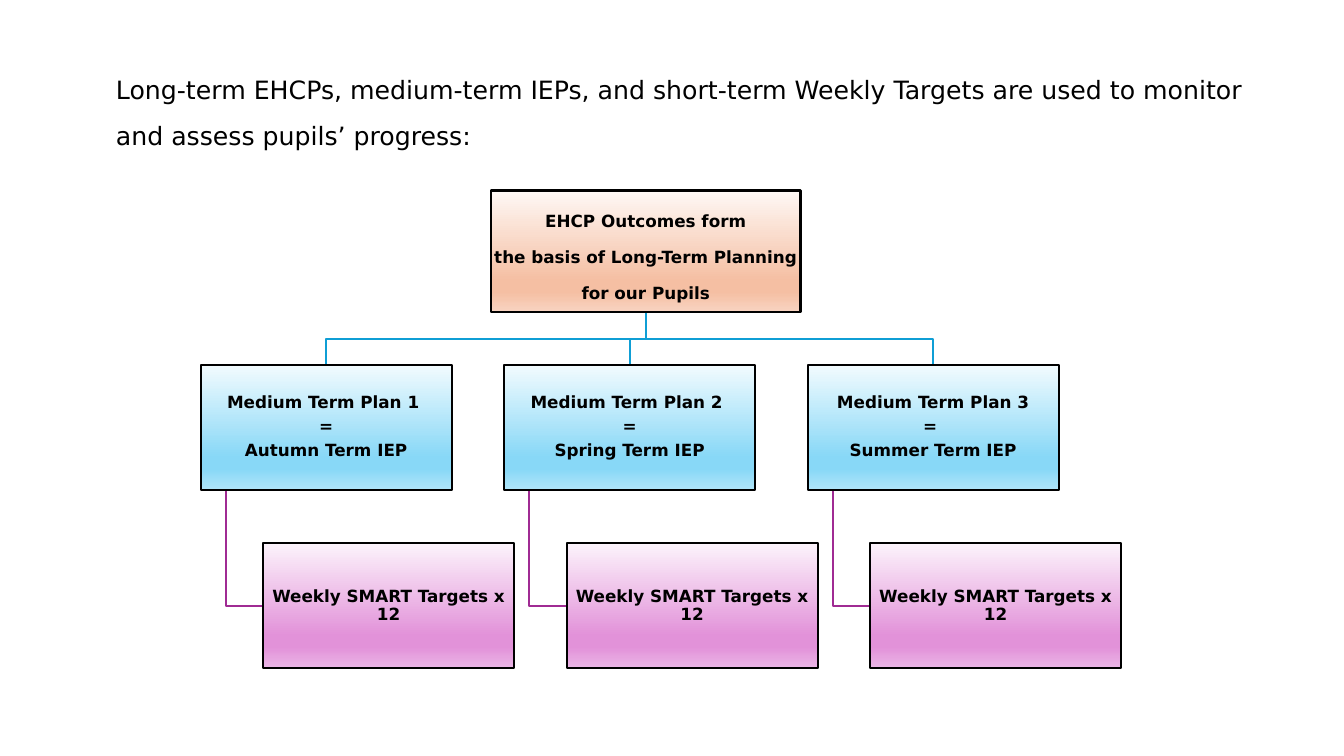
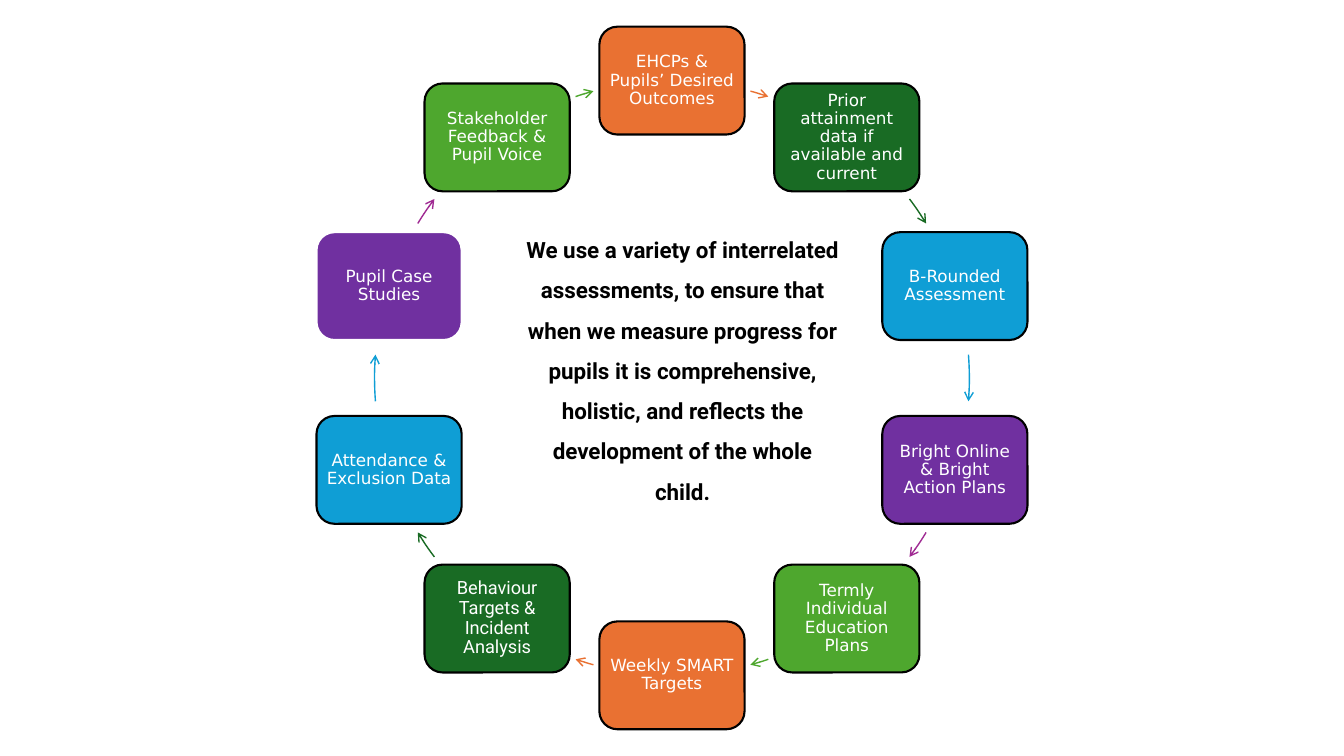
"""Build two slides on how pupils' progress is planned and assessed."""
import math

from lxml import etree
from pptx import Presentation
from pptx import util as u
from pptx.dml.color import RGBColor
from pptx.enum import shapes, text
from pptx.oxml.ns import qn

PAGE_WIDTH, PAGE_HEIGHT = 13.33, 7.5
COLORS = {
    "black": "000000", "white": "FFFFFF", "orange": "E97132",
    "forest": "196B24", "blue": "0F9ED5", "purple": "7030A0",
    "plum": "A02B93", "green": "4EA72E",
}
GRADIENTS = {
    "peach": ("FEF8F5", "F5BFA3", "F5BFA3", "F8D4C2"),
    "sky": ("F2FBFE", "88D8F7", "88D8F7", "B0E5F9"),
    "pink": ("FCF3FB", "E292D9", "E292D9", "EBB6E6"),
}
GRADIENT_STOPS = (0, 74, 83, 100)
MAIN_FONT, ACCENT_FONT = "DejaVu Sans", "Roboto"

COLUMN_LEFT, COLUMN_PITCH = 1.99, 3.01
PLAN_TOP, TARGET_TOP = 3.62, 5.39
BOX_WIDTH, BOX_HEIGHT = 2.49, 1.24
TARGET_INDENT, STEM_INDENT = 0.62, 0.25
OUTCOME_BOX = (4.87, 1.89, 3.07, 1.21)
PLANS = (
    ("Medium Term Plan 1 ", "=", "Autumn Term IEP"),
    ("Medium Term Plan 2 ", "=", "Spring Term IEP"),
    ("Medium Term Plan 3", "= ", "Summer Term IEP"),
)

RING_X, RING_Y, RING_RADIUS = PAGE_WIDTH / 2, PAGE_HEIGHT / 2, 2.95
NODE_WIDTH, NODE_HEIGHT = 1.44, 1.07
NODES = (
    ("EHCPs & Pupils’ Desired Outcomes", "orange"),
    ("Prior attainment data if available and current", "forest"),
    ("B-Rounded Assessment", "blue"),
    ("Bright Online & Bright Action Plans", "purple"),
    ("Termly Individual Education Plans", "green"),
    ("Weekly SMART Targets", "orange"),
    ("Behaviour Targets & Incident Analysis", "forest"),
    ("Attendance & Exclusion Data", "blue"),
    ("Pupil Case Studies", "purple"),
    ("Stakeholder Feedback & Pupil Voice", "green"),
)
NODE_FORMATS = {
    "Behaviour Targets & Incident Analysis": {"size": 13, "font": ACCENT_FONT},
}
NODE_LINES = {"Pupil Case Studies": "white"}
ARROW_COLORS = ("orange", "forest", "blue", "plum", "green")
ARROW_ANGLES = ((15.3, 18.9), (53, 58.7), (85.5, 94.5), (121.3, 127), (161.1, 164.7))


def rgb(name):
    """Return the named colour."""
    return RGBColor.from_string(COLORS[name])


def write_text(frame, *lines, size=12, font=MAIN_FONT, color="black", bold=False,
               align=text.PP_ALIGN.CENTER, spacing=0.9, after=4.2):
    """Fill a text frame with one formatted paragraph per line."""
    frame.word_wrap = True
    for index, line in enumerate(lines):
        para = frame.add_paragraph() if index else frame.paragraphs[0]
        para.alignment = align
        para.line_spacing = spacing
        para.space_before = u.Pt(0)
        para.space_after = u.Pt(after)
        span = para.add_run()
        span.text = line
        span.font.size = u.Pt(size)
        span.font.name = font
        span.font.bold = bold
        span.font.color.rgb = rgb(color)


def add_page(deck, title, left, top, width, height, **formats):
    """Add a title-only slide with its title moved and formatted."""
    page = deck.slides.add_slide(deck.slide_layouts[5])
    box = page.shapes.title
    box.left, box.top, box.width, box.height = map(u.Inches, (left, top, width, height))
    frame = box.text_frame
    frame.auto_size = text.MSO_AUTO_SIZE.NONE
    frame.vertical_anchor = text.MSO_ANCHOR.TOP
    write_text(frame, title, spacing=1.5, after=0, **formats)
    return page


def style_line(shape, color, width=1.5):
    """Give a shape a plain line without a shadow."""
    shape.shadow.inherit = False
    shape.line.color.rgb = rgb(color)
    shape.line.width = u.Pt(width)


def add_box(page, kind, place, inset, line="black"):
    """Add an outlined shape with even insets and middle-anchored text."""
    box = page.shapes.add_shape(kind, *map(u.Inches, place))
    style_line(box, line)
    frame = box.text_frame
    frame.vertical_anchor = text.MSO_ANCHOR.MIDDLE
    frame.margin_left = frame.margin_right = u.Inches(inset)
    frame.margin_top = frame.margin_bottom = u.Inches(inset)
    return box


def fill_gradient(box, name):
    """Fill a shape with a four-stop gradient running downwards."""
    box.fill.gradient()
    box.fill.gradient_angle = 270
    stops = box._element.spPr.find(qn("a:gradFill")).find(qn("a:gsLst"))
    for stop in list(stops):
        stops.remove(stop)
    for position, color in zip(GRADIENT_STOPS, GRADIENTS[name]):
        stop = etree.SubElement(stops, qn("a:gs"), pos=str(position * 1000))
        etree.SubElement(stop, qn("a:srgbClr"), val=color)


def add_chart_box(page, place, gradient, *lines, **formats):
    """Add a gradient rectangle with bold text."""
    box = add_box(page, shapes.MSO_SHAPE.RECTANGLE, place, 0.01)
    fill_gradient(box, gradient)
    write_text(box.text_frame, *lines, bold=True, **formats)


def add_route(page, points, color):
    """Draw an open line through points."""
    corners = [(u.Inches(x), u.Inches(y)) for x, y in points]
    builder = page.shapes.build_freeform(*corners[0])
    builder.add_line_segments(corners[1:], close=False)
    route = builder.convert_to_shape()
    route.fill.background()
    style_line(route, color)


def add_ring_arrow(page, start, end, color):
    """Draw an arrow along the ring between clockwise angles from the top."""
    size = 2 * RING_RADIUS
    place = (RING_X - RING_RADIUS, RING_Y - RING_RADIUS, size, size)
    arc = page.shapes.add_shape(shapes.MSO_SHAPE.ARC, *map(u.Inches, place))
    for index, angle in enumerate((start, end)):
        arc.adjustments[index] = (angle - 90) % 360 * 0.6
    arc.fill.background()
    style_line(arc, color, width=1)
    line = arc._element.spPr.find(qn("a:ln"))
    etree.SubElement(line, qn("a:tailEnd"), type="arrow")


def add_planning_page(deck):
    """Add the slide with the planning hierarchy."""
    page = add_page(
        deck, "Long-term EHCPs, medium-term IEPs, and short-term Weekly Targets "
        "are used to monitor and assess pupils’ progress:",
        1.05, 0.54, 11.8, 0.95, size=18, align=text.PP_ALIGN.LEFT)
    left, top, width, height = OUTCOME_BOX
    trunk_x, trunk_y = left + width / 2, top + height
    bus_y = (trunk_y + PLAN_TOP) / 2
    target_y = TARGET_TOP + BOX_HEIGHT / 2
    columns = [COLUMN_LEFT + COLUMN_PITCH * index for index in range(len(PLANS))]
    for x in columns:
        center, stem = x + BOX_WIDTH / 2, x + STEM_INDENT
        add_route(page, [(trunk_x, trunk_y), (trunk_x, bus_y),
                         (center, bus_y), (center, PLAN_TOP)], "blue")
        add_route(page, [(stem, PLAN_TOP + BOX_HEIGHT), (stem, target_y),
                         (x + TARGET_INDENT, target_y)], "plum")
    add_chart_box(page, OUTCOME_BOX, "peach", "EHCP Outcomes form",
                  "the basis of Long-Term Planning ", "for our Pupils", spacing=1.5)
    for x, plan in zip(columns, PLANS):
        add_chart_box(page, (x, PLAN_TOP, BOX_WIDTH, BOX_HEIGHT), "sky", *plan)
        add_chart_box(page, (x + TARGET_INDENT, TARGET_TOP, BOX_WIDTH, BOX_HEIGHT),
                      "pink", "Weekly SMART Targets x 12")


def add_assessment_page(deck):
    """Add the slide with the ring of assessments."""
    page = add_page(
        deck, "We use a variety of interrelated assessments, to ensure that when we "
        "measure progress for pupils it is comprehensive, holistic, and reflects "
        "the development of the whole child.",
        5.12, 2.16, 3.3, 2.89, size=16, font=ACCENT_FONT, bold=True)
    for index, (label, color) in enumerate(NODES):
        angle = math.radians(index * 360 / len(NODES))
        x = RING_X + RING_RADIUS * math.sin(angle)
        y = RING_Y - RING_RADIUS * math.cos(angle)
        place = (x - NODE_WIDTH / 2, y - NODE_HEIGHT / 2, NODE_WIDTH, NODE_HEIGHT)
        box = add_box(page, shapes.MSO_SHAPE.ROUNDED_RECTANGLE, place, 0.04,
                      NODE_LINES.get(label, "black"))
        box.fill.solid()
        box.fill.fore_color.rgb = rgb(color)
        write_text(box.text_frame, label, color="white", **NODE_FORMATS.get(label, {}))
        half, step = divmod(index, len(ARROW_ANGLES))
        start, end = (half * 180 + edge for edge in ARROW_ANGLES[step])
        add_ring_arrow(page, start, end, ARROW_COLORS[step])


def main():
    """Build and save the deck."""
    deck = Presentation()
    deck.slide_width, deck.slide_height = u.Inches(PAGE_WIDTH), u.Inches(PAGE_HEIGHT)
    add_planning_page(deck)
    add_assessment_page(deck)
    deck.save("out.pptx")


if __name__ == "__main__":
    main()
